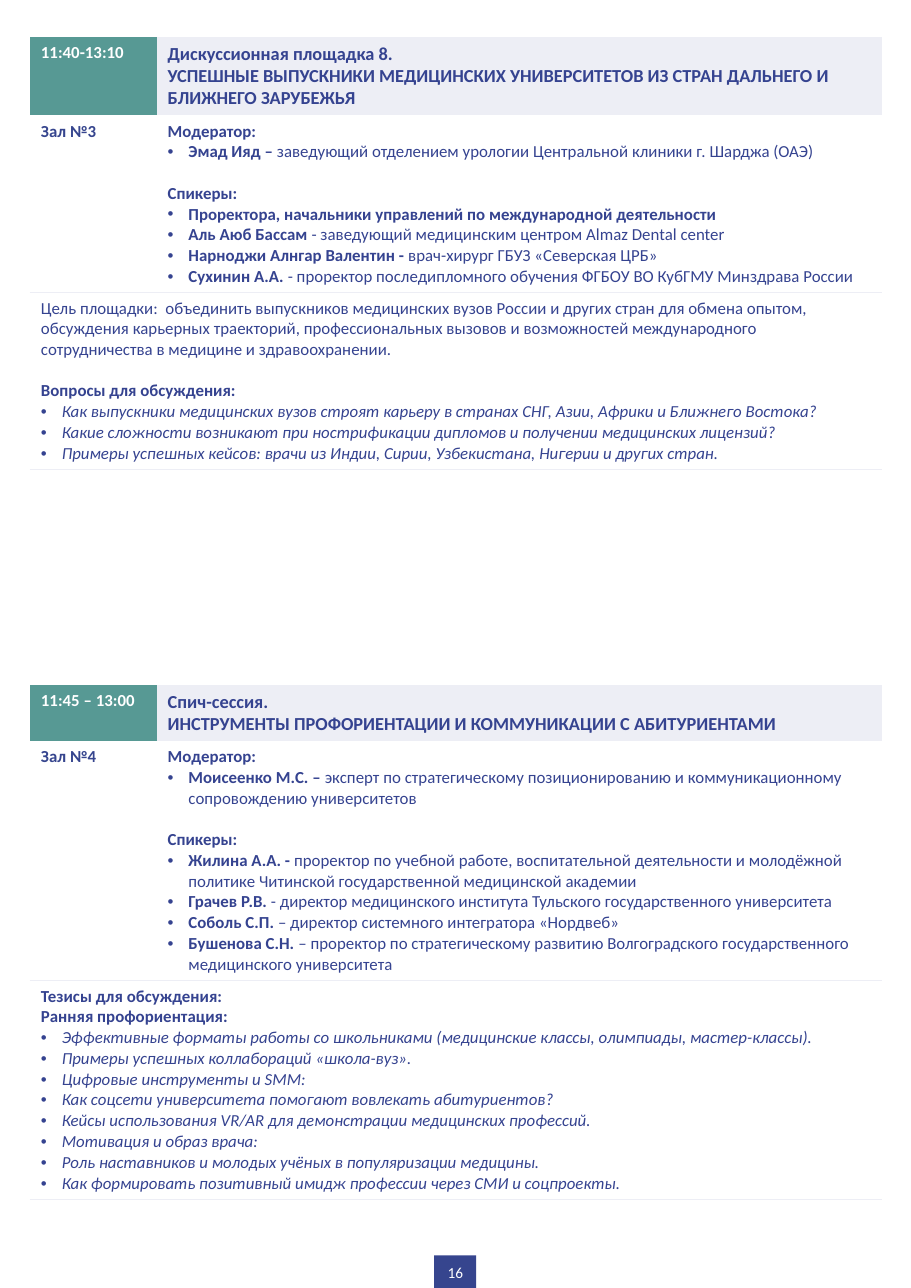
from dataclasses import dataclass

from lxml import etree
from pptx import Presentation
from pptx.dml.color import RGBColor
from pptx.enum.shapes import MSO_SHAPE
from pptx.enum.text import MSO_ANCHOR, PP_ALIGN
from pptx.oxml.ns import qn
from pptx.util import Cm, Pt

RECTANGLE = MSO_SHAPE.RECTANGLE
MIDDLE = MSO_ANCHOR.MIDDLE
CENTER = PP_ALIGN.CENTER


@dataclass(frozen=True)
class Theme:
    font: str = "Calibri"
    navy: str = "36458E"
    ink: str = "354390"
    teal: str = "579994"
    pale: str = "EDEEF5"
    white: str = "FFFFFF"
    title: float = 12
    body: float = 11
    page: float = 10
    gap: float = 13.4


THEME = Theme()
BOLD = {"bold": True}
PLAIN = {"bold": False}
ITALIC = {"bold": False, "italic": True}

TABLE_LEFT = Cm(0.69)
COLUMN_WIDTHS = (Cm(2.92), Cm(16.71))
BULLET_INDENT = Cm(0.48)


@dataclass(frozen=True)
class Line:
    runs: tuple
    bullet: bool = False
    gap: bool = False


def heading(text, gap=False):
    return Line(((text, BOLD),), gap=gap)


def person(name, role=""):
    runs = ((name, BOLD), (role, PLAIN)) if role else ((name, BOLD),)
    return Line(runs, bullet=True)


def topics(*texts):
    return [Line(((text, ITALIC),), bullet=True) for text in texts]


SESSIONS = [
    {
        "top": Cm(0.86),
        "row_heights": (Cm(1.8), Cm(4.07), Cm(4.07)),
        "time": "11:40-13:10",
        "title": [
            heading("Дискуссионная площадка 8."),
            heading("УСПЕШНЫЕ ВЫПУСКНИКИ МЕДИЦИНСКИХ УНИВЕРСИТЕТОВ ИЗ СТРАН ДАЛЬНЕГО И БЛИЖНЕГО ЗАРУБЕЖЬЯ"),
        ],
        "room": "Зал №3",
        "people": [
            heading("Модератор:"),
            person("Эмад Ияд – ", "заведующий отделением урологии Центральной клиники г. Шарджа (ОАЭ)"),
            heading("Спикеры:", gap=True),
            person("Проректора, начальники управлений по международной деятельности"),
            person("Аль Аюб Бассам ", "- заведующий медицинским центром Almaz Dental center"),
            person("Нарноджи Алнгар Валентин - ", "врач-хирург ГБУЗ «Северская ЦРБ»"),
            person("Сухинин А.А.", " - проректор последипломного обучения ФГБОУ ВО КубГМУ Минздрава России"),
        ],
        "agenda": [
            Line((("Цель площадки:  объединить выпускников медицинских вузов России и других стран "
                   "для обмена опытом, обсуждения карьерных траекторий, профессиональных вызовов "
                   "и возможностей международного сотрудничества в медицине и здравоохранении.", PLAIN),)),
            heading("Вопросы для обсуждения:", gap=True),
            *topics(
                "Как выпускники медицинских вузов строят карьеру в странах СНГ, Азии, Африки и Ближнего Востока?",
                "Какие сложности возникают при нострификации дипломов и получении медицинских лицензий?",
                "Примеры успешных кейсов: врачи из Индии, Сирии, Узбекистана, Нигерии и других стран.",
            ),
        ],
        "closing_rule": 0.5,
    },
    {
        "top": Cm(15.8),
        "row_heights": (Cm(1.29), Cm(5.51), Cm(5.05)),
        "time": "11:45 – 13:00",
        "title": [
            heading("Спич-сессия."),
            heading("ИНСТРУМЕНТЫ ПРОФОРИЕНТАЦИИ И КОММУНИКАЦИИ С АБИТУРИЕНТАМИ"),
        ],
        "room": "Зал №4",
        "people": [
            heading("Модератор:"),
            person("Моисеенко М.С. – ", "эксперт по стратегическому позиционированию и коммуникационному "
                                        "сопровождению университетов"),
            heading("Спикеры:", gap=True),
            person("Жилина А.А. - ", "проректор по учебной работе, воспитательной деятельности и молодёжной "
                                     "политике Читинской государственной медицинской академии"),
            person("Грачев Р.В.", " - директор медицинского института Тульского государственного университета"),
            person("Соболь С.П.", " – директор системного интегратора «Нордвеб»"),
            person("Бушенова С.Н.", " – проректор по стратегическому развитию Волгоградского государственного "
                                    "медицинского университета"),
        ],
        "agenda": [
            heading("Тезисы для обсуждения:"),
            heading("Ранняя профориентация:"),
            *topics(
                "Эффективные форматы работы со школьниками (медицинские классы, олимпиады, мастер-классы).",
                "Примеры успешных коллабораций «школа-вуз».",
                "Цифровые инструменты и SMM:",
                "Как соцсети университета помогают вовлекать абитуриентов?",
                "Кейсы использования VR/AR для демонстрации медицинских профессий.",
                "Мотивация и образ врача:",
                "Роль наставников и молодых учёных в популяризации медицины.",
                "Как формировать позитивный имидж профессии через СМИ и соцпроекты.",
            ),
        ],
        "closing_rule": 1,
    },
]


def paint(fill, color):
    fill.solid()
    fill.fore_color.rgb = RGBColor.from_string(color)


def add_bullet(paragraph):
    properties = paragraph._p.get_or_add_pPr()
    properties.set("marL", str(BULLET_INDENT))
    properties.set("indent", str(-BULLET_INDENT))
    etree.SubElement(properties, qn("a:buFont")).set("typeface", "Arial")
    etree.SubElement(properties, qn("a:buChar")).set("char", "•")


def write_lines(frame, lines, size, color):
    for index, line in enumerate(lines):
        paragraph = frame.paragraphs[0] if index == 0 else frame.add_paragraph()
        if line.gap:
            paragraph.space_before = Pt(THEME.gap)
        if line.bullet:
            add_bullet(paragraph)
        for text, style in line.runs:
            run = paragraph.add_run()
            run.text = text
            for name, value in {"name": THEME.font, "size": Pt(size), **style}.items():
                setattr(run.font, name, value)
            run.font.color.rgb = RGBColor.from_string(color)


def set_borders(cell, top=0, bottom=0):
    properties = cell._tc.get_or_add_tcPr()
    widths = {"a:lnL": 0, "a:lnR": 0, "a:lnT": top, "a:lnB": bottom}
    for position, (side, width) in enumerate(widths.items()):
        border = etree.Element(qn(side), w=str(Pt(width)))
        if width:
            solid = etree.SubElement(border, qn("a:solidFill"))
            etree.SubElement(solid, qn("a:srgbClr")).set("val", THEME.pale)
        else:
            etree.SubElement(border, qn("a:noFill"))
        properties.insert(position, border)


def add_session(slide, session):
    heights = session["row_heights"]
    table = slide.shapes.add_table(len(heights), len(COLUMN_WIDTHS), TABLE_LEFT, session["top"],
                                   sum(COLUMN_WIDTHS), sum(heights)).table
    table.first_row = table.horz_banding = False
    for column, width in zip(table.columns, COLUMN_WIDTHS):
        column.width = width
    for row, height in zip(table.rows, heights):
        row.height = height
    table.cell(2, 0).merge(table.cell(2, 1))

    fills = ((THEME.teal, THEME.pale), (THEME.white,) * 2, (THEME.white,) * 2)
    rules = ((0, 0), (0, 1), (1, session["closing_rule"]))
    for row, row_fills, (top, bottom) in zip(table.rows, fills, rules):
        for cell, color in zip(row.cells, row_fills):
            paint(cell.fill, color)
            set_borders(cell, top, bottom)

    contents = {
        (0, 0): ([heading(session["time"])], THEME.body, THEME.white),
        (0, 1): (session["title"], THEME.title, THEME.ink),
        (1, 0): ([heading(session["room"])], THEME.body, THEME.navy),
        (1, 1): (session["people"], THEME.body, THEME.ink),
        (2, 0): (session["agenda"], THEME.body, THEME.ink),
    }
    for place, (lines, size, color) in contents.items():
        write_lines(table.cell(*place).text_frame, lines, size, color)


def add_page_number(slide, number):
    badge = slide.shapes.add_shape(RECTANGLE, Cm(10.01), Cm(28.95), Cm(0.97), Cm(0.76))
    badge.shadow.inherit = False
    paint(badge.fill, THEME.navy)
    badge.line.fill.background()
    frame = badge.text_frame
    for name, value in {"margin_left": 0, "margin_right": 0, "vertical_anchor": MIDDLE}.items():
        setattr(frame, name, value)
    write_lines(frame, [Line(((number, PLAIN),))], THEME.page, THEME.white)
    frame.paragraphs[0].alignment = CENTER


def main():
    deck = Presentation()
    deck.slide_width, deck.slide_height = Cm(21), Cm(29.7)
    slide = deck.slides.add_slide(deck.slide_layouts[6])
    add_page_number(slide, "16")
    for session in SESSIONS:
        add_session(slide, session)
    deck.save("out.pptx")


if __name__ == "__main__":
    main()
